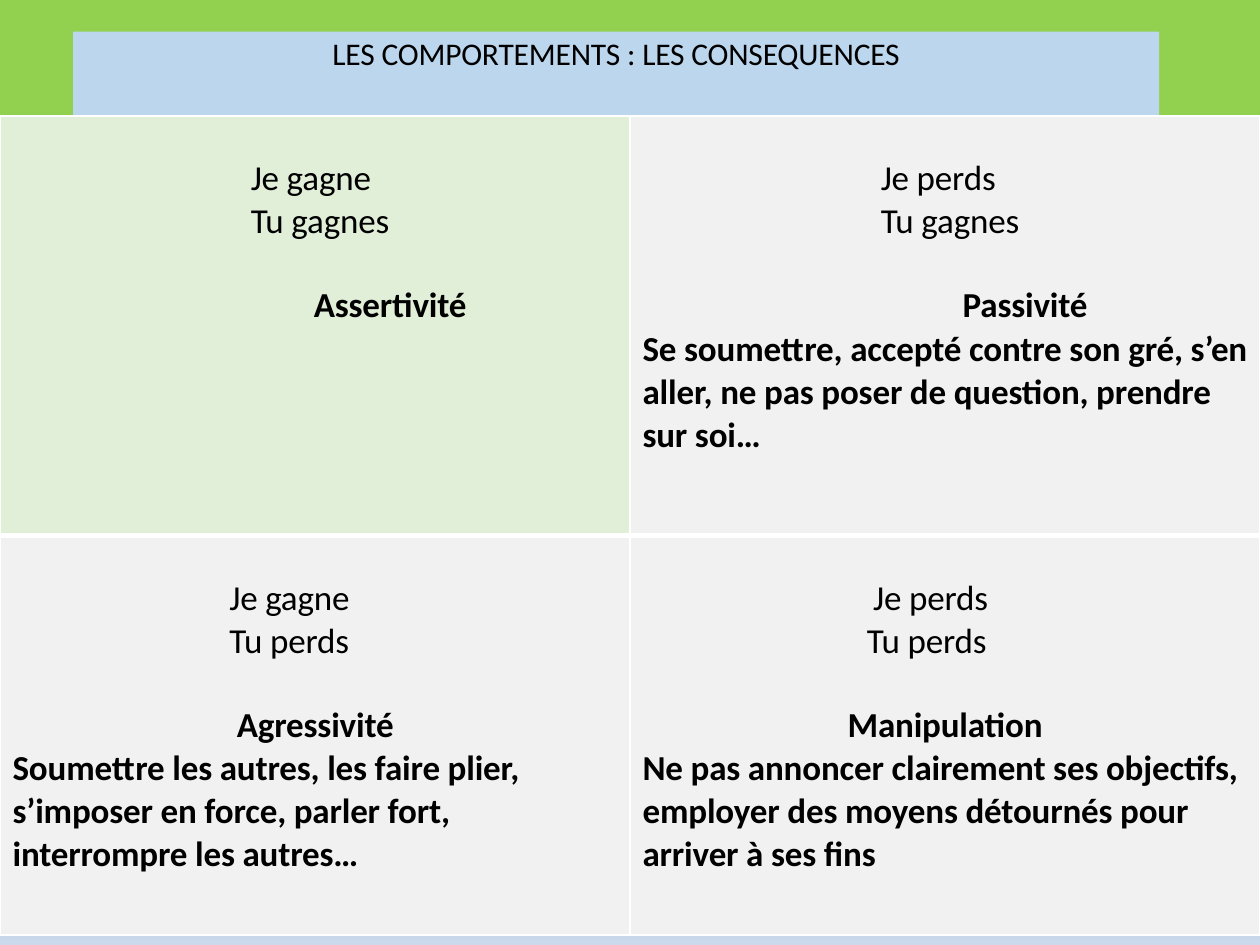
"""Builds the slide on the consequences of four behaviours."""
from lxml.etree import SubElement
from pptx import Presentation
from pptx.dml.color import RGBColor
from pptx.enum.text import MSO_ANCHOR, MSO_AUTO_SIZE, PP_ALIGN
from pptx.oxml.ns import qn
from pptx.util import Inches, Pt


def color(value):
    return RGBColor.from_string(value)


def add_text(paragraph, text, size, bold=False):
    run = paragraph.add_run()
    run.text = text
    run._r.get_or_add_rPr().set("spc", "-10")
    font = paragraph.font
    font.name, font.size, font.bold = "Calibri", Pt(size), bold
    font.color.rgb = color("000000")


presentation = Presentation()
presentation.slide_width, presentation.slide_height = Inches(10), Inches(7.5)
slide = presentation.slides.add_slide(presentation.slide_layouts[5])

slide.background.fill.gradient()
gradient = slide._element.find(".//" + qn("a:gradFill"))
stops = gradient.find(qn("a:gsLst"))
for stop in list(stops):
    stops.remove(stop)
for position, value in ((31, "92D050"), (68, "A6C9B3"), (84, "8DADD4"), (100, "CAD9EB")):
    stop = SubElement(stops, qn("a:gs"), pos=str(position * 1000))
    SubElement(stop, qn("a:srgbClr"), val=value)
gradient.find(qn("a:lin")).set("ang", "5400000")

title = slide.shapes.title
title.left, title.top, title.width, title.height = map(Inches, (0.58, 0.25, 8.62, 0.32))
title.fill.solid()
title.fill.fore_color.rgb = color("BCD6ED")
frame = title.text_frame
frame.margin_left = frame.margin_right = frame.margin_bottom = 0
frame.margin_top = Inches(0.02)
frame.vertical_anchor = MSO_ANCHOR.TOP
frame.auto_size = MSO_AUTO_SIZE.SHAPE_TO_FIT_TEXT
paragraph = frame.paragraphs[0]
paragraph.alignment = PP_ALIGN.CENTER
paragraph.space_before = Pt(1.4)
add_text(paragraph, "LES COMPORTEMENTS : LES CONSEQUENCES", 18)

behaviours = [
    [
        ("E1EFD9", (1.99, "Je gagne"), (1.99, "Tu gagnes"), (2.49, "Assertivité"), ""),
        ("F1F1F1", (1.99, "Je perds"), (1.99, "Tu gagnes"), (2.64, "Passivité"),
         "Se soumettre, accepté contre son gré, s’en aller, ne pas poser de question, "
         "prendre sur soi…"),
    ],
    [
        ("F1F1F1", (1.82, "Je gagne"), (1.82, "Tu perds"), (1.88, "Agressivité"),
         "Soumettre les autres, les faire plier, s’imposer en force, parler fort, "
         "interrompre les autres…"),
        ("F1F1F1", (1.93, "Je perds"), (1.88, "Tu perds"), (0, "Manipulation"),
         "Ne pas annoncer clairement ses objectifs, employer des moyens détournés "
         "pour arriver à ses fins"),
    ],
]
table = slide.shapes.add_table(2, 2, 0, Inches(0.92), Inches(10), Inches(6.5)).table
table.first_row = table.horz_banding = False
for row, height in zip(table.rows, (3.33, 3.17)):
    row.height = Inches(height)

for row_index, row_behaviours in enumerate(behaviours):
    for column_index, (fill, me, you, name, description) in enumerate(row_behaviours):
        cell = table.cell(row_index, column_index)
        cell.margin_left = cell.margin_right = cell.margin_bottom = 0
        cell.margin_top = Inches(0.33)
        lines = [(*me, False, 0), (*you, False, 0), (*name, True, 23.5)]
        if description:
            lines.append((0.1, description, True, 0.4))
        for line_index, (indent, text, bold, space) in enumerate(lines):
            frame = cell.text_frame
            paragraph = frame.add_paragraph() if line_index else frame.paragraphs[0]
            paragraph.space_before = Pt(space)
            paragraph.alignment = PP_ALIGN.LEFT if indent else PP_ALIGN.CENTER
            paragraph._p.get_or_add_pPr().set("marL", str(Inches(indent)))
            add_text(paragraph, text, 20, bold)
        properties = cell._tc.get_or_add_tcPr()
        thick_side = "a:lnT" if row_index else "a:lnB"
        for side in ("a:lnL", "a:lnR", "a:lnT", "a:lnB"):
            width = Pt(3 if side == thick_side else 1)
            border = SubElement(properties, qn(side), w=str(width))
            SubElement(SubElement(border, qn("a:solidFill")), qn("a:srgbClr"), val="FFFFFF")
        cell.fill.solid()
        cell.fill.fore_color.rgb = color(fill)

presentation.save("out.pptx")
